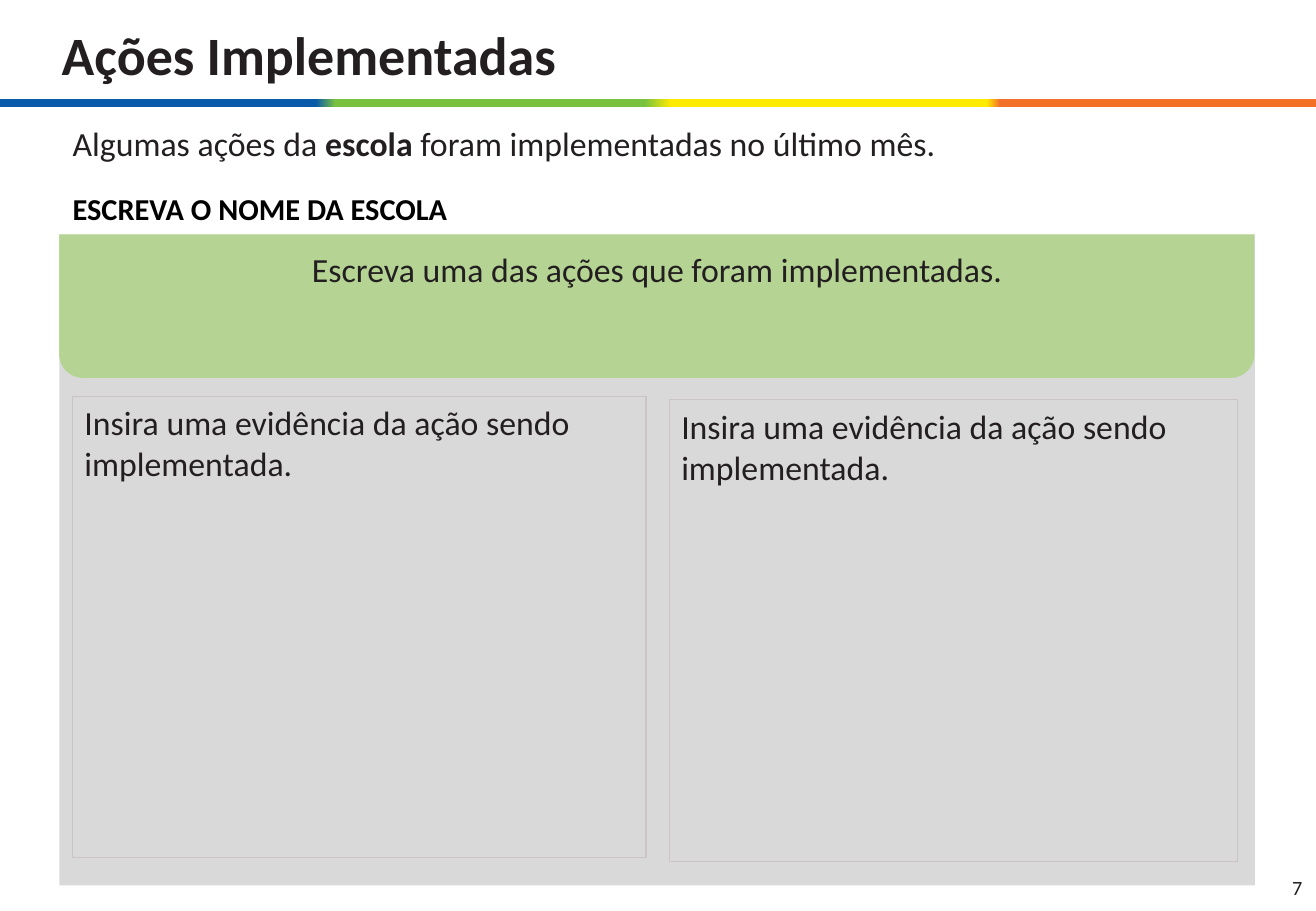
from lxml.etree import SubElement
from pptx import Presentation
from pptx.dml.color import RGBColor
from pptx.enum.shapes import MSO_SHAPE
from pptx.enum.text import MSO_ANCHOR, PP_ALIGN
from pptx.oxml.ns import qn
from pptx.util import Pt

INK = RGBColor(0x23, 0x1F, 0x20)
BLACK = RGBColor(0x00, 0x00, 0x00)
PANEL = RGBColor(0xD9, 0xD9, 0xD9)
GREEN = RGBColor(0x92, 0xD0, 0x50)
BORDER = RGBColor(0xCB, 0xC4, 0xC6)
BAND_BLUE = RGBColor(0x0A, 0x5A, 0xAA)
BAND_GREEN = RGBColor(0x78, 0xC2, 0x40)
BAND_YELLOW = RGBColor(0xFF, 0xEA, 0x01)
BAND_ORANGE = RGBColor(0xF3, 0x70, 0x29)

prs = Presentation()
prs.slide_width, prs.slide_height = Pt(780), Pt(540)
s = prs.slides.add_slide(prs.slide_layouts[6])


def add_box(kind, x, y, w, h):
    sp = s.shapes.add_shape(kind, Pt(x), Pt(y), Pt(w), Pt(h))
    sp.shadow.inherit = False
    sp.fill.background()
    sp.line.fill.background()
    return sp


def write(sp, runs, size, align=PP_ALIGN.LEFT, anchor=MSO_ANCHOR.TOP, color=INK, before=0):
    tf = sp.text_frame
    tf.word_wrap = True
    tf.vertical_anchor = anchor
    p = tf.paragraphs[0]
    p.alignment = align
    p.space_before = Pt(before)
    p.font.name, p.font.size = "Calibri", Pt(size)
    p.font.color.rgb = color
    for text, bold in runs:
        r = p.add_run()
        r.text = text
        r.font.bold = bold


# Grey panel
panel = add_box(MSO_SHAPE.RECTANGLE, 35.3, 139, 708.5, 385.9)
panel.fill.solid()
panel.fill.fore_color.rgb = PANEL

# Four-colour band under the title
band = add_box(MSO_SHAPE.RECTANGLE, 0, 58.7, 780, 4.5)
band.fill.gradient()
band.fill.gradient_angle = 0
stops = band.fill._fill._gradFill.find(qn("a:gsLst"))
for stop in list(stops):
    stops.remove(stop)
for color, start, end in [(BAND_BLUE, 0, 24), (BAND_GREEN, 25.5, 49),
                          (BAND_YELLOW, 51, 75), (BAND_ORANGE, 76, 100)]:
    for position in (start, end):
        gs = SubElement(stops, qn("a:gs"), pos=str(int(position * 1000)))
        SubElement(gs, qn("a:srgbClr"), val=str(color))

# Half-transparent action header, rounded at the bottom
header = add_box(MSO_SHAPE.ROUND_2_SAME_RECTANGLE, 35, 139, 708.5, 85)
header.rotation = 180
header.fill.solid()
header.fill.fore_color.rgb = GREEN
tint = header.fill._xPr.find(qn("a:solidFill")).find(qn("a:srgbClr"))
SubElement(tint, qn("a:alpha"), val="50000")

# Title, introduction, school name and page number
title = s.shapes.add_textbox(Pt(29.5), Pt(3.6), Pt(609), Pt(57))
write(title, [("Ações Implementadas", True)], 32, anchor=MSO_ANCHOR.MIDDLE)

intro = s.shapes.add_textbox(Pt(36), Pt(69), Pt(708.5), Pt(34))
write(intro, [("Algumas ações da ", False), ("escola ", True),
              ("foram implementadas no último mês.", False)],
      20, align=PP_ALIGN.JUSTIFY, before=12)

school = s.shapes.add_textbox(Pt(36), Pt(109.5), Pt(708.5), Pt(28))
write(school, [("ESCREVA O NOME DA ESCOLA", True)], 18,
      anchor=MSO_ANCHOR.MIDDLE, color=BLACK, before=3.6)

number = s.shapes.add_textbox(Pt(730), Pt(512), Pt(49), Pt(28))
write(number, [("7", False)], 12, align=PP_ALIGN.RIGHT, anchor=MSO_ANCHOR.MIDDLE)

# Action text over the header
action = s.shapes.add_textbox(Pt(35.3), Pt(139), Pt(708.5), Pt(85))
tf = action.text_frame
tf.margin_left = tf.margin_top = tf.margin_right = Pt(8.5)
tf.margin_bottom = Pt(2.8)
write(action, [("Escreva uma das ações que foram implementadas.", False)], 20,
      align=PP_ALIGN.CENTER, before=4)

# Evidence boxes
for x, y, w in [(43, 234.9, 340), (396.7, 237, 337)]:
    evidence = add_box(MSO_SHAPE.RECTANGLE, x, y, w, 273.6)
    evidence.line.color.rgb = BORDER
    evidence.line.width = Pt(0.75)
    write(evidence, [("Insira uma evidência da ação sendo implementada.", False)], 20)

prs.save("out.pptx")
